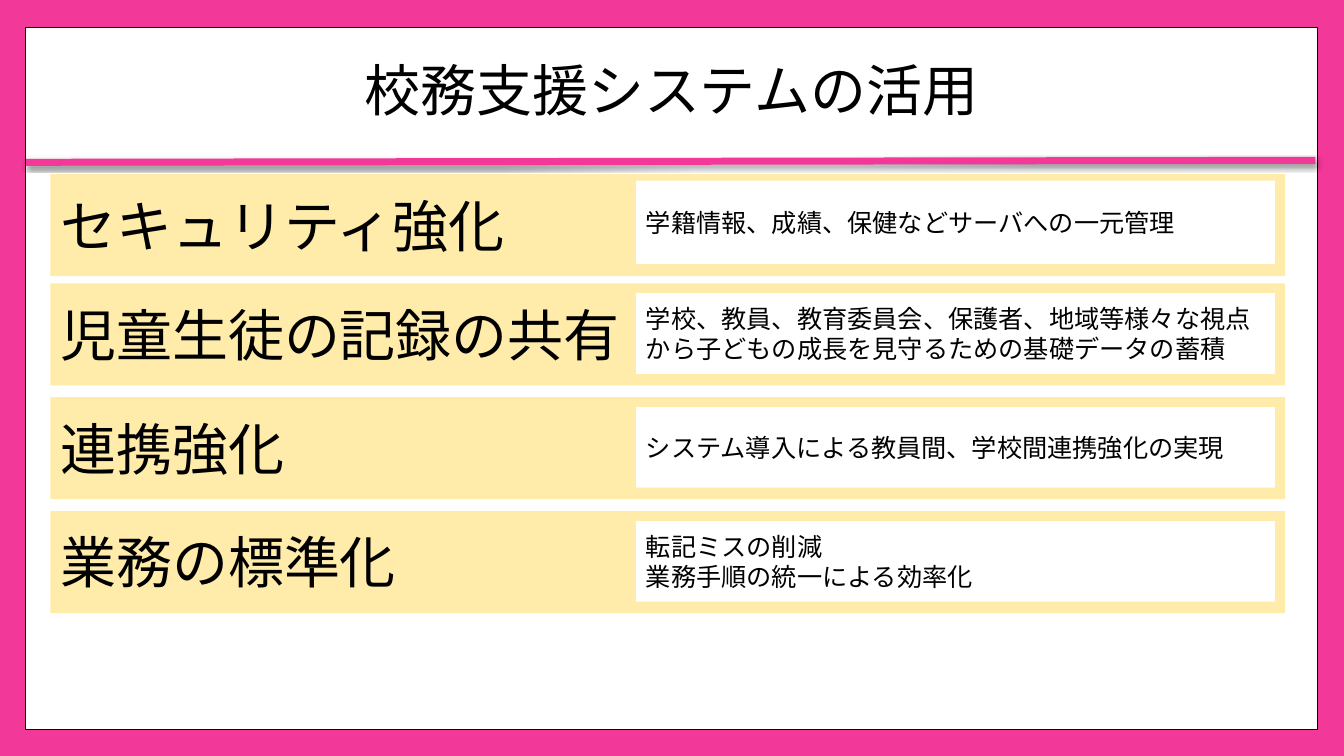
import pptx
import pptx.dml.color
import pptx.enum.lang
import pptx.enum.shapes
import pptx.enum.text
import pptx.oxml
import pptx.util
from pptx.util import Cm

PINK, CREAM, WHITE, BLACK = "F23899", "FFECAA", "FFFFFF", "000000"
BAND_LEFT, BAND_WIDTH, BAND_HEIGHT = 1.27, 31.12, 2.57
DETAIL_LEFT, DETAIL_WIDTH = 16.03, 16.1
LABEL_INSET, LABEL_HEIGHT = 0.3, 1.96
GLYPH_WIDTH, LABEL_PADDING = 1.42, 0.54

# Each row: band top, detail inset, detail height, label, detail lines.
ROWS = [
    (4.39, 0.16, 2.11, "セキュリティ強化", ["学籍情報、成績、保健などサーバへの一元管理"]),
    (7.14, 0.25, 2.03, "児童生徒の記録の共有",
     ["学校、教員、教育委員会、保護者、地域等様々な視点から子どもの成長を見守るための基礎データの蓄積"]),
    (10.01, 0.25, 2.03, "連携強化", ["システム導入による教員間、学校間連携強化の実現"]),
    (12.88, 0.25, 2.03, "業務の標準化", ["転記ミスの削減", "業務手順の統一による効率化"]),
]

SHADOW = (
    '<a:effectLst xmlns:a="http://schemas.openxmlformats.org/drawingml/2006/main">'
    '<a:outerShdw blurRad="38100" dist="25400" dir="5400000" rotWithShape="0">'
    '<a:srgbClr val="000000"><a:alpha val="45000"/></a:srgbClr>'
    '</a:outerShdw></a:effectLst>'
)


def paint(colour_format, colour):
    """Apply a hex colour to a fill."""
    colour_format.solid()
    colour_format.fore_color.rgb = pptx.dml.color.RGBColor.from_string(colour)


def write(frame, lines, size, font="Arial", colour=BLACK, align="LEFT",
          anchor="MIDDLE", wrap=True, spacing=1.0):
    """Fill a text frame with one paragraph per line."""
    frame.word_wrap = wrap
    frame.vertical_anchor = pptx.enum.text.MSO_ANCHOR[anchor]
    for number, line in enumerate(lines):
        paragraph = frame.add_paragraph() if number else frame.paragraphs[0]
        paragraph.alignment = pptx.enum.text.PP_ALIGN[align]
        paragraph.line_spacing = spacing
        run = paragraph.add_run()
        run.text = line
        run.font.size = pptx.util.Pt(size)
        run.font.name = font
        run.font.language_id = pptx.enum.lang.MSO_LANGUAGE_ID.JAPANESE
        paint(run.font.fill, colour)


def add_box(slide, left, top, width, height, fill, outline=None):
    """Add a flat rectangle, outlined only when a colour is given."""
    box = slide.shapes.add_shape(pptx.enum.shapes.MSO_SHAPE.RECTANGLE,
                                 Cm(left), Cm(top), Cm(width), Cm(height))
    box.shadow.inherit = False
    paint(box.fill, fill)
    if outline:
        paint(box.line.fill, outline)
        box.line.width = pptx.util.Pt(1)
    else:
        box.line.fill.background()
    return box


def add_divider(slide):
    """Draw the shadowed line under the title."""
    divider = slide.shapes.add_connector(pptx.enum.shapes.MSO_CONNECTOR.STRAIGHT,
                                         Cm(0.66), Cm(4.09), Cm(33.15), Cm(4.04))
    paint(divider.line.fill, PINK)
    divider.line.width = pptx.util.Pt(5)
    divider.element.spPr.append(pptx.oxml.parse_xml(SHADOW))


def place_title(slide, text):
    """Move the title placeholder above the panel and format it."""
    title = slide.shapes.title
    title.left, title.top, title.width, title.height = Cm(0.66), Cm(0.91), Cm(32.51), Cm(2.9)
    title.element.getparent().append(title.element)
    write(title.text_frame, [text], 40, font="Cabin", align="CENTER", spacing=0.9)


def add_row(slide, top, detail_inset, detail_height, label, details):
    """Add a cream band with its label and white detail box."""
    add_box(slide, BAND_LEFT, top, BAND_WIDTH, BAND_HEIGHT, CREAM)
    detail_box = add_box(slide, DETAIL_LEFT, top + detail_inset, DETAIL_WIDTH,
                         detail_height, WHITE)
    write(detail_box.text_frame, details, 18)
    label_width = len(label) * GLYPH_WIDTH + LABEL_PADDING
    label_box = slide.shapes.add_textbox(Cm(BAND_LEFT), Cm(top + LABEL_INSET),
                                         Cm(label_width), Cm(LABEL_HEIGHT))
    write(label_box.text_frame, [label], 40, anchor="TOP", wrap=False)
    label_box.text_frame.auto_size = pptx.enum.text.MSO_AUTO_SIZE.SHAPE_TO_FIT_TEXT


def main():
    """Build and save the slide."""
    deck = pptx.Presentation()
    deck.slide_width, deck.slide_height = Cm(33.87), Cm(19.05)
    slide = deck.slides.add_slide(deck.slide_layouts.get_by_name("Title Only"))
    paint(slide.background.fill, PINK)
    add_box(slide, 0.64, 0.69, 32.56, 17.7, WHITE, outline=BLACK)
    add_divider(slide)
    place_title(slide, "校務支援システムの活用")
    for row in ROWS:
        add_row(slide, *row)
    deck.save("out.pptx")


if __name__ == "__main__":
    main()
